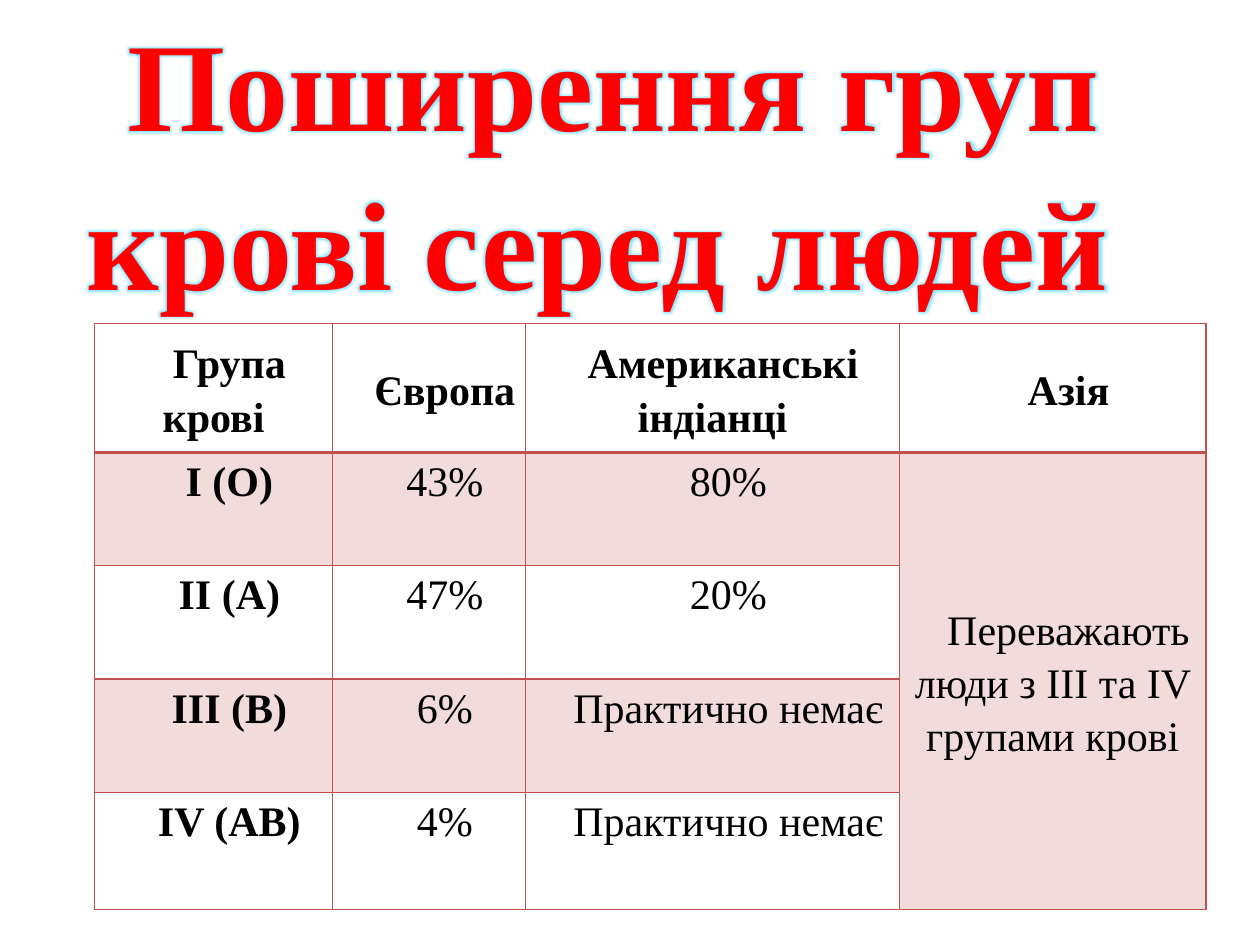
from dataclasses import dataclass

from lxml import etree
from pptx import Presentation
from pptx.dml.color import RGBColor
from pptx.enum.text import MSO_ANCHOR, PP_ALIGN
from pptx.oxml.ns import qn
from pptx.util import Pt

CENTER = PP_ALIGN.CENTER
MIDDLE, TOP = MSO_ANCHOR.MIDDLE, MSO_ANCHOR.TOP


@dataclass(frozen=True)
class Theme:
    font: str = "Times New Roman"
    title_color: str = "FF0000"
    text_color: str = "000000"
    accent: str = "C0504D"
    glow: str = "00C8FF"
    title_size: float = 72
    table_size: float = 24
    glow_radius: float = 3.6
    glow_opacity: int = 45
    band_opacity: int = 20
    thin_line: float = 1
    thick_line: float = 2


@dataclass(frozen=True)
class Entry:
    text: str
    bold: bool = False
    anchor: int = TOP
    indent: float = 18


THEME = Theme()
COLUMN_WIDTHS = (136.1, 110.2, 213.8, 175)
ROW_HEIGHTS = (73.4, 64.8, 64.8, 64.8, 67)
HEADER = (
    Entry("Група крові", True, MIDDLE),
    Entry("Європа", True, MIDDLE),
    Entry("Американські індіанці", True, MIDDLE, 12),
    Entry("Азія", True, MIDDLE),
)
GROUPS = (
    ("І (О)", "43%", "80%"),
    ("II (А)", "47%", "20%"),
    ("III (В)", "6%", "Практично немає"),
    ("IV (АВ)", "4%", "Практично немає"),
)
ASIA = Entry("Переважають люди з III та IV групами крові", anchor=MIDDLE)


def apply_format(target, values: dict) -> None:
    for name, value in values.items():
        setattr(target, name, value)


def add_color(parent, color: str, opacity: int = 100) -> None:
    node = etree.SubElement(parent, qn("a:srgbClr"), val=color)
    if opacity < 100:
        etree.SubElement(node, qn("a:alpha"), val=str(opacity * 1000))


def write_span(para, text: str, size: float, color: str, bold: bool):
    span = para.add_run()
    span.text = text
    apply_format(span.font, {"name": THEME.font, "size": Pt(size), "bold": bold})
    span.font.color.rgb = RGBColor.from_string(color)
    return span


def add_glow(span) -> None:
    effects = etree.Element(qn("a:effectLst"))
    glow = etree.SubElement(effects, qn("a:glow"), rad=str(Pt(THEME.glow_radius)))
    add_color(glow, THEME.glow, THEME.glow_opacity)
    span.font._element.find(qn("a:solidFill")).addnext(effects)


def add_title(page, text: str) -> None:
    box = page.shapes.add_textbox(Pt(-0.7), Pt(66.2), Pt(702.7), Pt(46.8))
    apply_format(box.text_frame, {"word_wrap": True, "vertical_anchor": MIDDLE})
    para = box.text_frame.paragraphs[0]
    apply_format(para, {"alignment": CENTER, "line_spacing": 1.05})
    add_glow(write_span(para, text, THEME.title_size, THEME.title_color, True))


def paint_cell(cell, shaded: bool) -> None:
    if not shaded:
        cell.fill.background()
        return
    cell.fill.solid()
    cell.fill.fore_color.rgb = RGBColor.from_string(THEME.accent)
    color = cell._tc.tcPr.find(".//" + qn("a:srgbClr"))
    etree.SubElement(color, qn("a:alpha"), val=str(THEME.band_opacity * 1000))


def draw_borders(cell, thick_side: str) -> None:
    for position, side in enumerate(("L", "R", "T", "B")):
        width = THEME.thick_line if side == thick_side else THEME.thin_line
        line = etree.Element(qn(f"a:ln{side}"), w=str(Pt(width)))
        add_color(etree.SubElement(line, qn("a:solidFill")), THEME.accent)
        cell._tc.tcPr.insert(position, line)


def fill_cell(cell, entry: Entry) -> None:
    cell.vertical_anchor = entry.anchor
    para = cell.text_frame.paragraphs[0]
    apply_format(para, {"alignment": CENTER, "line_spacing": 1.15, "space_after": Pt(10)})
    para._p.get_or_add_pPr().set("indent", str(Pt(entry.indent)))
    write_span(para, entry.text, THEME.table_size, THEME.text_color, entry.bold)


def add_blood_table(page) -> None:
    frame = page.shapes.add_table(
        len(ROW_HEIGHTS), len(COLUMN_WIDTHS), Pt(54), Pt(185),
        Pt(sum(COLUMN_WIDTHS)), Pt(sum(ROW_HEIGHTS)))
    table = frame.table
    apply_format(table, {"first_row": False, "horz_banding": False})
    for column, width in zip(table.columns, COLUMN_WIDTHS):
        column.width = Pt(width)
    for row, height in zip(table.rows, ROW_HEIGHTS):
        row.height = Pt(height)

    last_row, asia_column = len(ROW_HEIGHTS) - 1, len(COLUMN_WIDTHS) - 1
    table.cell(1, asia_column).merge(table.cell(last_row, asia_column))
    margins = {f"margin_{side}": 0 for side in ("left", "right", "top", "bottom")}
    for row_index, row in enumerate(table.rows):
        thick_side = {0: "B", 1: "T"}.get(row_index, "")
        for column_index, cell in enumerate(row.cells):
            in_asia = row_index > 0 and column_index == asia_column
            apply_format(cell, margins)
            paint_cell(cell, row_index % 2 == 1 or in_asia)
            draw_borders(cell, thick_side)

    body = [[Entry(text, bold=index == 0) for index, text in enumerate(group)]
            for group in GROUPS]
    body[0].append(ASIA)
    for row_index, entries in enumerate([HEADER, *body]):
        for column_index, entry in enumerate(entries):
            fill_cell(table.cell(row_index, column_index), entry)


def main() -> None:
    deck = Presentation()
    apply_format(deck, {"slide_width": Pt(720), "slide_height": Pt(540)})
    page = deck.slides.add_slide(deck.slide_layouts[6])
    add_title(page, "Поширення груп крові серед людей ")
    add_blood_table(page)
    deck.save("out.pptx")


if __name__ == "__main__":
    main()
